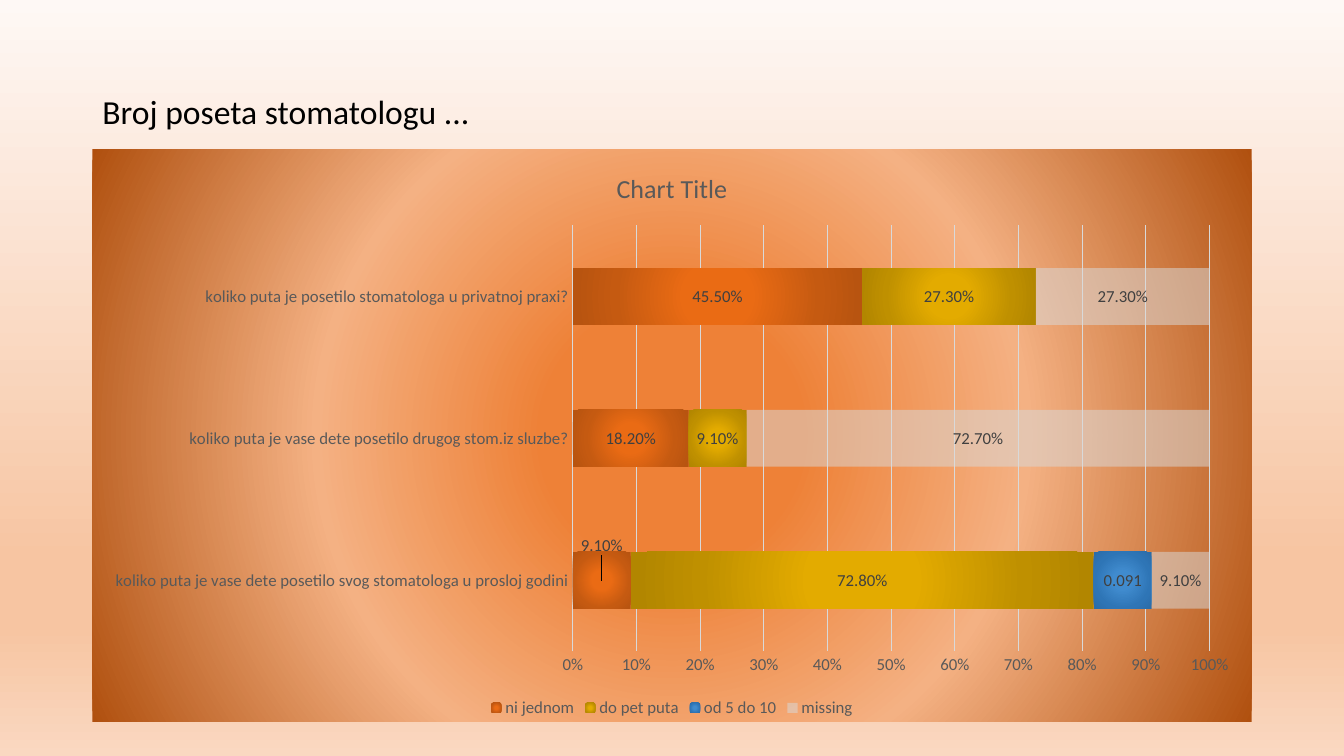
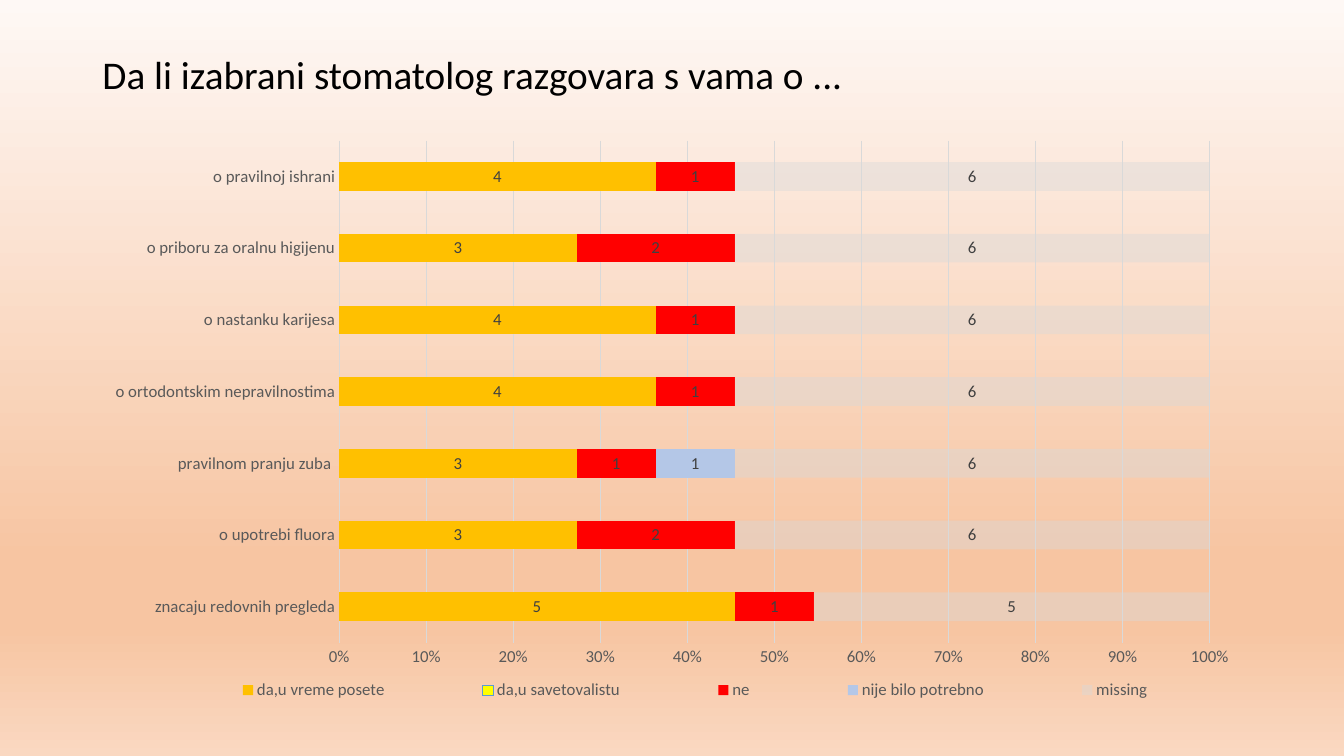
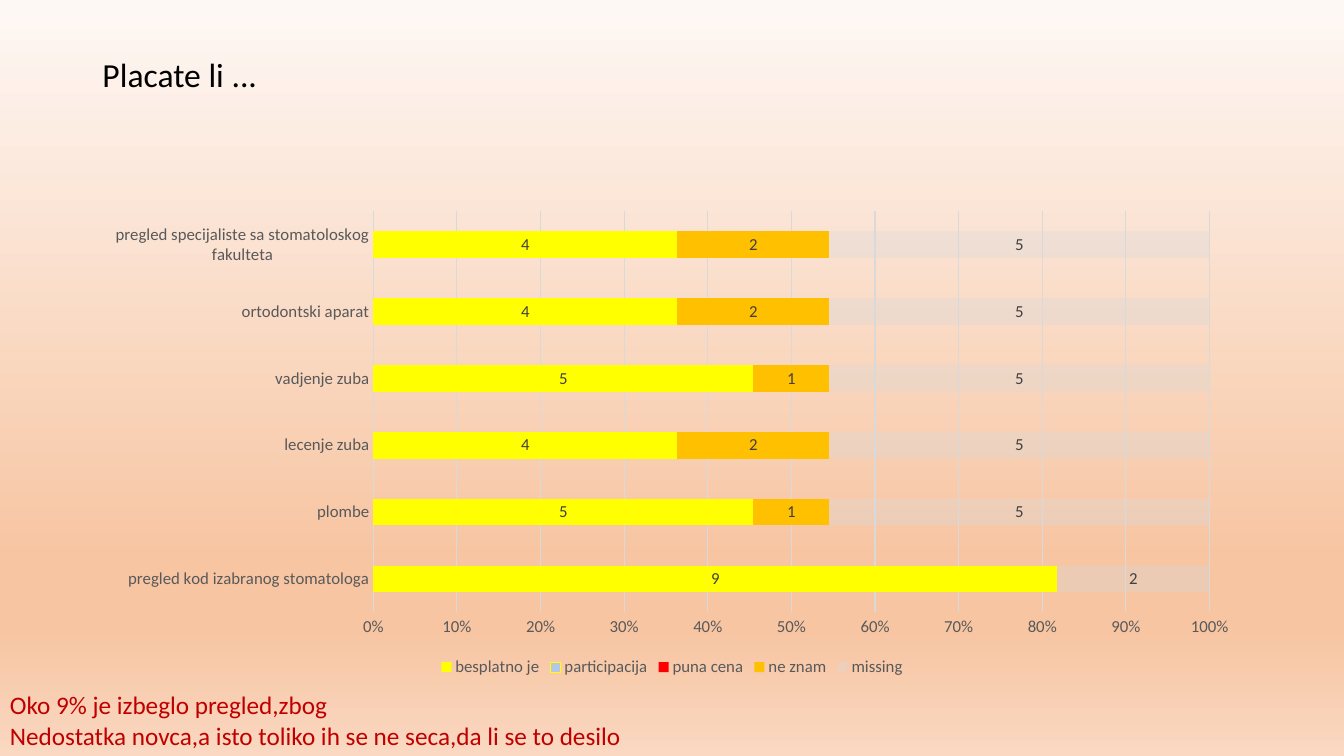
"""Build three slides of stacked bars on dental visits."""
from dataclasses import dataclass
from typing import Optional

from pptx import Presentation
from pptx.chart.data import CategoryChartData
from pptx.dml.color import RGBColor
from pptx.enum.chart import XL_CHART_TYPE, XL_LABEL_POSITION, XL_LEGEND_POSITION, XL_TICK_MARK
from pptx.enum.text import MSO_ANCHOR, MSO_AUTO_SIZE, PP_ALIGN
from pptx.oxml import parse_xml
from pptx.oxml.ns import nsdecls, qn
from pptx.util import Inches, Pt

STACKED = XL_CHART_TYPE.BAR_STACKED_100
CENTER = XL_LABEL_POSITION.CENTER
BOTTOM = XL_LEGEND_POSITION.BOTTOM
NO_TICK = XL_TICK_MARK.NONE
MIDDLE = MSO_ANCHOR.MIDDLE
NO_FIT = MSO_AUTO_SIZE.NONE
LEFT = PP_ALIGN.LEFT

COLS, ROWS = 160, 90
CELL = Inches(1) / 12
EDGE, SPAN, TOP = 11, 138, 4.8
FACE = "Calibri"
BLACK, GREY, DARK, RULE = "000000", "595959", "404040", "D9D9D9"
YELLOW, AMBER, RED, PALE, BLUE = "FFFF00", "FFC000", "FF0000", "B4C7E7", "5B9BD5"
WASH = ((0, "FEF8F5"), (74, "F7C5A2"), (83, "F7C5A2"), (100, "FAD8C1"))
GLOW = ((20, "EE8137"), (55, "F4B183"), (100, "B0500F"))
PERCENT = "0.00%"


@dataclass
class Series:
    """Hold one row of values with its look."""
    name: str
    vals: tuple
    color: str = ""
    stops: tuple = ()
    alpha: int = 100
    line: str = ""
    form: str = "General"


@dataclass
class Page:
    """Hold the content of one slide."""
    title: str
    size: int
    tall: float
    top: float
    high: float
    cats: tuple
    rows: tuple
    head: str = ""
    glow: tuple = ()
    legend: Optional[tuple] = None
    shift: Optional[tuple] = None
    note: str = ""


def orb(inner: str, mid: str, outer: str) -> tuple:
    """Return the stops of a round bar gradient."""
    return (0, inner), (23, inner), (69, mid), (97, outer)


PAGES = (
    Page("Broj poseta stomatologu ...", 24, 17.4, 17.75, 68.2,
         ("koliko puta je vase dete posetilo svog stomatologa u prosloj godini",
          "koliko puta je vase dete posetilo drugog stom.iz sluzbe?",
          "koliko puta je posetilo stomatologa u privatnoj praxi?"),
         (Series("ni jednom", (0.091, 0.182, 0.455), form=PERCENT,
                 stops=orb("EA6B14", "C55A11", "B85410")),
          Series("do pet puta", (0.728, 0.091, 0.273), form=PERCENT,
                 stops=orb("E3AB00", "BF9000", "B28600")),
          Series("od 5 do 10", (0.091, None, None),
                 stops=orb("408BCE", "2E75B6", "2B6DA9")),
          Series("missing", (0.091, 0.727, 0.273), RULE, alpha=52, form=PERCENT)),
         head="Chart Title", glow=GLOW, shift=(0, -0.06)),
    Page("Da li izabrani stomatolog razgovara s vama o ...", 28, 8.7, 15.35, 69.6,
         ("znacaju redovnih pregleda", "o upotrebi fluora", "pravilnom pranju zuba ",
          "o ortodontskim nepravilnostima", "o nastanku karijesa",
          "o priboru za oralnu higijenu", "o pravilnoj ishrani"),
         (Series("da,u vreme posete", (5, 3, 3, 4, 4, 3, 4), AMBER),
          Series("da,u savetovalistu", (None,) * 7, YELLOW, line=BLUE),
          Series("ne", (1, 2, 1, 1, 1, 2, 1), RED),
          Series("nije bilo potrebno", (None, None, 1) + (None,) * 4, PALE),
          Series("missing", (5,) + (6,) * 6, RULE, alpha=42)),
         legend=(0.05, 0.93, 0.94, 0.06)),
    Page("Placate li ...", 24, 8.7, 24, 57.1,
         ("pregled kod izabranog stomatologa", "plombe", "lecenje zuba", "vadjenje zuba",
          "ortodontski aparat", "pregled specijaliste sa stomatoloskog fakulteta"),
         (Series("besplatno je", (9, 5, 4, 5, 4, 4), YELLOW),
          Series("participacija", (None,) * 6, PALE, line=YELLOW),
          Series("puna cena", (None,) * 6, RED),
          Series("ne znam", (None, 1, 2, 1, 2, 2), AMBER),
          Series("missing", (2,) + (5,) * 5, RULE, alpha=34)),
         note="Oko 9% je izbeglo pregled,zbog\n"
              "Nedostatka novca,a isto toliko ih se ne seca,da li se to desilo"),
)


def rgb(code: str) -> RGBColor:
    """Turn a hex string into a colour."""
    return RGBColor.from_string(code)


def box(left: float, top: float, wide: float, high: float) -> tuple:
    """Turn grid cells into lengths."""
    return tuple(round(n * CELL) for n in (left, top, wide, high))


def style(font, size: float, color: str) -> None:
    """Set face, size and colour of a font."""
    for key, val in {"name": FACE, "size": Pt(size), "bold": False}.items():
        setattr(font, key, val)
    font.color.rgb = rgb(color)


def blend(stops: tuple, ring: bool = True):
    """Return a round or downward gradient fill."""
    marks = "".join(f'<a:gs pos="{at * 1000}"><a:srgbClr val="{rgb(code)}"/></a:gs>'
                    for at, code in stops)
    way = ('<a:path path="circle"><a:fillToRect l="50000" t="50000" r="50000" b="50000"/></a:path>'
           if ring else '<a:lin ang="5400000" scaled="0"/>')
    return parse_xml(f'<a:gradFill {nsdecls("a")} rotWithShape="1">'
                     f'<a:gsLst>{marks}</a:gsLst>{way}</a:gradFill>')


def swap(root, fill) -> None:
    """Put a gradient in place of a solid fill."""
    old = root.find(qn("a:solidFill"))
    root.replace(old, fill)


def frame(stops: tuple = ()):
    """Return chart area properties without a line."""
    props = parse_xml(f'<c:spPr {nsdecls("c", "a")}><a:noFill/><a:ln><a:noFill/></a:ln></c:spPr>')
    if stops:
        props.replace(props[0], blend(stops))
    return props


def place(**vals: float):
    """Return a manual layout in shares of the chart."""
    modes = '<c:xMode val="edge"/><c:yMode val="edge"/>' if "w" in vals else ""
    parts = "".join(f'<c:{key} val="{val}"/>' for key, val in vals.items())
    return parse_xml(f'<c:layout {nsdecls("c")}><c:manualLayout>{modes}{parts}'
                     '</c:manualLayout></c:layout>')


def set_axes(chart) -> None:
    """Format both axes and the grid."""
    cat, val = chart.category_axis, chart.value_axis
    for axis in (cat, val):
        for key in ("major_tick_mark", "minor_tick_mark"):
            setattr(axis, key, NO_TICK)
        style(axis.tick_labels.font, 12, GREY)
    cat.has_major_gridlines = False
    val.has_major_gridlines = True
    for line in (cat.format.line, val.major_gridlines.format.line):
        line.color.rgb = rgb(RULE)
        line.width = Pt(0.75)
    val.format.line.fill.background()
    val.tick_labels.number_format = "0%"
    val.tick_labels.number_format_is_linked = False


def set_bar(bar, root, row: Series) -> None:
    """Colour and label one series."""
    bar.format.fill.solid()
    bar.format.fill.fore_color.rgb = rgb(row.color or BLACK)
    props = root.find(qn("c:spPr"))
    if row.stops:
        swap(props, blend(row.stops))
    elif row.alpha < 100:
        tint = next(props.iter(qn("a:srgbClr")))
        tint.append(parse_xml(f'<a:alpha {nsdecls("a")} val="{row.alpha * 1000}"/>'))
    if row.line:
        bar.format.line.color.rgb = rgb(row.line)
        bar.format.line.width = Pt(0.75)
    else:
        bar.format.line.fill.background()
    tags = bar.data_labels
    for key, val in {"show_value": True, "position": CENTER, "number_format": row.form,
                     "number_format_is_linked": False}.items():
        setattr(tags, key, val)
    style(tags.font, 12, DARK)


def add_bars(slide, page: Page) -> None:
    """Draw the chart of one page."""
    data = CategoryChartData()
    data.categories = page.cats
    for row in page.rows:
        data.add_series(row.name, row.vals, row.form)
    chart = slide.shapes.add_chart(STACKED, *box(EDGE, page.top, SPAN, page.high), data).chart
    style(chart.font, 10, BLACK)
    chart.has_title = bool(page.head)
    if page.head:
        text = chart.chart_title.text_frame
        text.text = page.head
        style(text.paragraphs[0].runs[0].font, 18.6, GREY)
    root = chart.element
    root.find(qn("c:chart")).addnext(frame(page.glow))
    next(root.iter(qn("c:plotArea"))).append(frame())
    set_axes(chart)
    chart.has_legend = True
    chart.legend.position = BOTTOM
    chart.legend.include_in_layout = False
    style(chart.legend.font, 12, GREY)
    if page.legend:
        key = next(root.iter(qn("c:legend")))
        for old in key.findall(qn("c:layout")):
            key.remove(old)
        key.find(qn("c:legendPos")).addnext(place(**dict(zip("xywh", page.legend))))
    plot = chart.plots[0]
    plot.gap_width, plot.overlap, plot.vary_by_categories = 150, 100, False
    for bar, node, row in zip(plot.series, root.iter(qn("c:ser")), page.rows):
        set_bar(bar, node, row)
    if page.shift:
        tag = plot.series[0].points[0].data_label
        style(tag.font, 12, DARK)
        tag.position = CENTER
        node = next(root.iter(qn("c:dLbl")))
        node.insert(1, place(**dict(zip("xy", page.shift))))


def add_title(slide, page: Page) -> None:
    """Fill and move the title placeholder."""
    shape = slide.shapes.title
    spots = box(EDGE, TOP, SPAN, page.tall)
    for key, val in zip(("left", "top", "width", "height"), spots):
        setattr(shape, key, val)
    frame_text = shape.text_frame
    frame_text.text = page.title
    for key, val in {"vertical_anchor": MIDDLE, "auto_size": NO_FIT, "word_wrap": True}.items():
        setattr(frame_text, key, val)
    para = frame_text.paragraphs[0]
    para.alignment, para.line_spacing = LEFT, 0.9
    style(para.runs[0].font, page.size, BLACK)


def add_note(slide, note: str) -> None:
    """Write the remark at the foot of a slide."""
    text = slide.shapes.add_textbox(*box(0, 81.5, 76, 8.5)).text_frame
    text.text = note
    text.word_wrap = False
    for para in text.paragraphs:
        style(para.runs[0].font, 18, "C00000")


def main() -> None:
    """Build and save the slides."""
    deck = Presentation()
    deck.slide_width, deck.slide_height = round(COLS * CELL), round(ROWS * CELL)
    master = deck.slide_master
    master.background.fill.solid()
    master.background.fill.fore_color.rgb = rgb(WASH[0][1])
    swap(next(master.element.iter(qn("p:bgPr"))), blend(WASH, ring=False))
    for page in PAGES:
        slide = deck.slides.add_slide(deck.slide_layouts.get_by_name("Title Only"))
        add_title(slide, page)
        add_bars(slide, page)
        if page.note:
            add_note(slide, page.note)
    deck.save("out.pptx")


if __name__ == "__main__":
    main()
